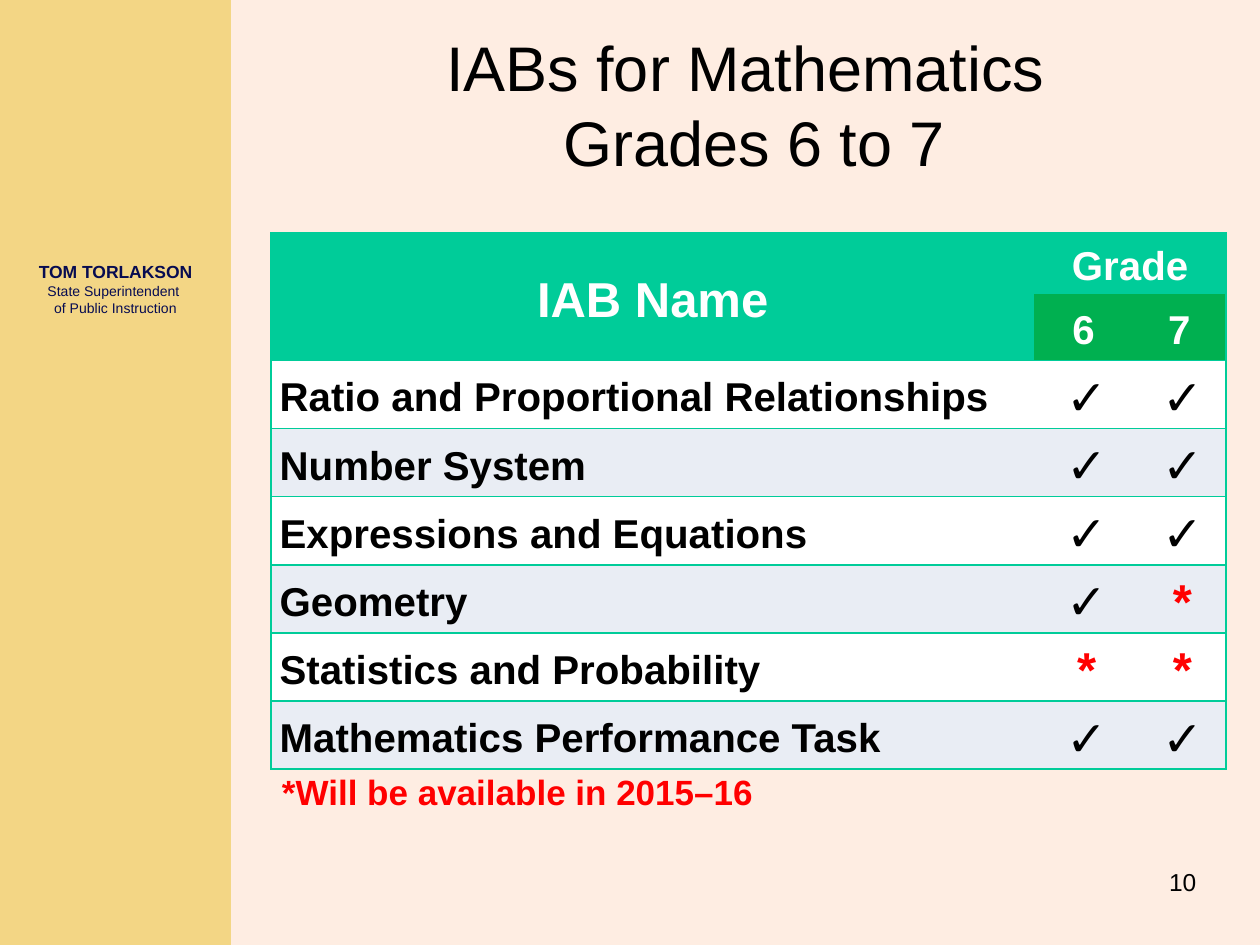
"""Build the slide listing the mathematics IABs for grades 6 to 7."""
import pptx
import pptx.dml.color
import pptx.enum.shapes
import pptx.enum.text
import pptx.oxml
import pptx.oxml.ns
import pptx.util

Pt = pptx.util.Pt
ALIGN = pptx.enum.text.PP_ALIGN
ANCHOR = pptx.enum.text.MSO_ANCHOR
FONT = "Arial"
BLACK, WHITE, RED, NAVY = "000000", "FFFFFF", "FF0000", "070C51"
CREAM, SAND, TEAL, GREEN, PALE = "FEEDE2", "F3D685", "00CC99", "00B050", "E9EDF4"

TITLE = ["IABs for Mathematics", " Grades 6 to 7"]
OFFICIAL = [("TOM TORLAKSON", 10, True),
            ("State Superintendent ", 8, False),
            ("of Public Instruction", 8, False)]
HEADER = [["IAB Name", "Grade", ""], ["", "6", "7"]]
BLOCKS = [
    ("Ratio and Proportional Relationships", "✓", "✓"),
    ("Number System", "✓", "✓"),
    ("Expressions and Equations", "✓", "✓"),
    ("Geometry", "✓", "*"),
    ("Statistics and Probability", "*", "*"),
    ("Mathematics Performance Task", "✓", "✓"),
]
FOOTNOTE = "*Will be available in 2015–16"
PAGE = "10"
COL_WIDTHS = [436.3, 56.2, 53.3]
HEADER_HEIGHT, BLOCK_HEIGHT = 34.2, 38.9


def rgb(value):
    """Return a colour from its hex string."""
    return pptx.dml.color.RGBColor.from_string(value)


def add_run(p, text, size, color, bold=False):
    """Append one formatted run to a paragraph."""
    r = p.add_run()
    r.text = text
    r.font.name, r.font.size, r.font.bold = FONT, Pt(size), bold
    r.font.color.rgb = rgb(color)


def add_lines(p, lines, color):
    """Append runs separated by line breaks."""
    for i, (text, size, bold) in enumerate(lines):
        if i:
            p.add_line_break()
        add_run(p, text, size, color, bold)


def add_text(slide, box, lines, color, align=ALIGN.LEFT, anchor=ANCHOR.TOP, wrap=True):
    """Add a text box holding one paragraph."""
    tf = slide.shapes.add_textbox(*map(Pt, box)).text_frame
    tf.word_wrap, tf.vertical_anchor = wrap, anchor
    tf.paragraphs[0].alignment = align
    add_lines(tf.paragraphs[0], lines, color)
    return tf


def set_borders(cell, visible):
    """Draw the named sides of a cell and hide the others."""
    tc_pr = cell._tc.get_or_add_tcPr()
    for i, side in enumerate("LRTB"):
        paint = (f'<a:solidFill><a:srgbClr val="{TEAL}"/></a:solidFill>'
                 if side in visible else "<a:noFill/>")
        tc_pr.insert(i, pptx.oxml.parse_xml(
            f'<a:ln{side} {pptx.oxml.ns.nsdecls("a")} w="{Pt(1)}">{paint}</a:ln{side}>'))


def fill_cell(cell, text, size, color, bold, fill, align, hanging, sides):
    """Format one table cell and write its text."""
    cell.fill.solid()
    cell.fill.fore_color.rgb = rgb(fill)
    set_borders(cell, sides)
    cell.margin_left = cell.margin_right = cell.margin_top = cell.margin_bottom = 0
    cell.vertical_anchor = ANCHOR.MIDDLE
    p = cell.text_frame.paragraphs[0]
    p.alignment, p.line_spacing = align, 1.15
    p_pr = p._p.get_or_add_pPr()
    p_pr.set("marL", str(Pt(18)))
    p_pr.set("indent", str(-Pt(hanging)))
    if text:
        add_run(p, text, size, color, bold)


def add_iab_table(slide):
    """Add the table of IAB names and grades."""
    heights = [HEADER_HEIGHT] * len(HEADER) + [BLOCK_HEIGHT] * len(BLOCKS)
    table = slide.shapes.add_table(
        len(heights), len(COL_WIDTHS), Pt(154.8), Pt(133.2),
        Pt(sum(COL_WIDTHS)), Pt(sum(heights))).table
    for col, width in zip(table.columns, COL_WIDTHS):
        col.width = Pt(width)
    for row, height in zip(table.rows, heights):
        row.height = Pt(height)
    table.cell(0, 0).merge(table.cell(1, 0))
    table.cell(0, 1).merge(table.cell(0, 2))
    sides = ["LTB", "TB", "RTB"]
    for i, texts in enumerate(HEADER):
        for j, text in enumerate(texts):
            fill = GREEN if i and j else TEAL
            edge = "RT" if (i, j) == (0, 1) else sides[j]
            fill_cell(table.cell(i, j), text, 23 if j else 28, WHITE, True, fill,
                      ALIGN.CENTER, 18, edge)
    for i, texts in enumerate(BLOCKS):
        fill = PALE if i % 2 else WHITE
        for j, text in enumerate(texts):
            size, align, hanging = (28, ALIGN.CENTER, 14.4) if j else (23, ALIGN.LEFT, 13)
            fill_cell(table.cell(i + len(HEADER), j), text, size,
                      RED if text == "*" else BLACK, text != "✓", fill,
                      align, hanging, sides[j])


def main():
    """Assemble and save the slide."""
    prs = pptx.Presentation()
    prs.slide_width, prs.slide_height = Pt(720), Pt(540)
    slide = prs.slides.add_slide(prs.slide_layouts[5])
    slide.background.fill.solid()
    slide.background.fill.fore_color.rgb = rgb(CREAM)

    sp = slide.shapes.add_shape(pptx.enum.shapes.MSO_SHAPE.RECTANGLE,
                                0, 0, Pt(132), Pt(540))
    sp.shadow.inherit = False
    sp.fill.solid()
    sp.fill.fore_color.rgb = rgb(SAND)
    sp.line.fill.background()
    add_text(slide, (6, 138, 120, 54), OFFICIAL, NAVY, ALIGN.CENTER, ANCHOR.MIDDLE)

    title = slide.shapes.title
    title.left, title.top, title.width, title.height = map(Pt, (132, 14.4, 588, 90))
    tf = title.text_frame
    tf.vertical_anchor = ANCHOR.MIDDLE
    tf.paragraphs[0].alignment = ALIGN.CENTER
    add_lines(tf.paragraphs[0], [(text, 36, False) for text in TITLE], BLACK)

    add_text(slide, (558.7, 491.8, 132, 36), [(PAGE, 14, False)], BLACK, ALIGN.RIGHT)
    add_iab_table(slide)
    tf = add_text(slide, (154, 437, 286, 31.5), [(FOOTNOTE, 20, True)], RED, wrap=False)
    tf.auto_size = pptx.enum.text.MSO_AUTO_SIZE.SHAPE_TO_FIT_TEXT
    prs.save("out.pptx")


if __name__ == "__main__":
    main()
